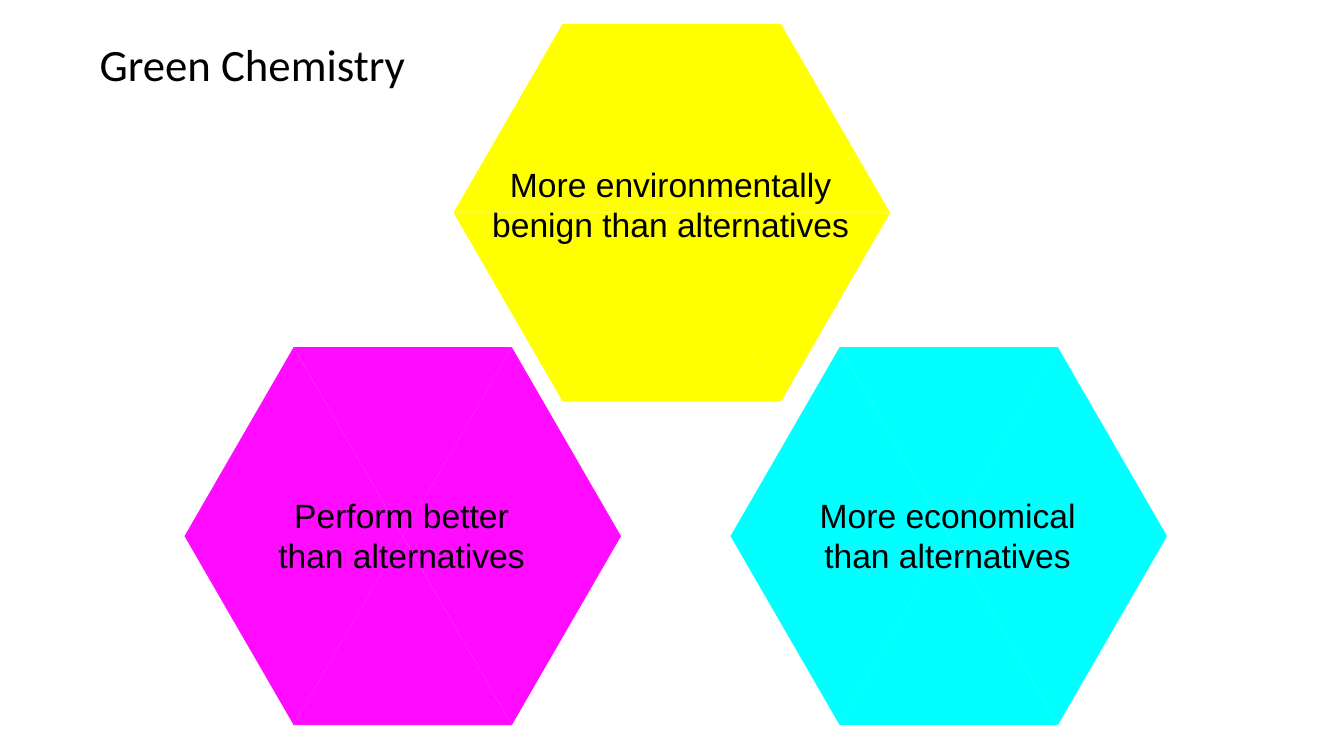
"""Build the Green Chemistry slide with three hexagons made of triangles."""
from pptx import Presentation
from pptx.dml.color import RGBColor
from pptx.enum.shapes import MSO_SHAPE
from pptx.enum.text import MSO_AUTO_SIZE, PP_ALIGN
from pptx.util import Cm, Pt

TRI = MSO_SHAPE.ISOSCELES_TRIANGLE
LEFT, MID = PP_ALIGN.LEFT, PP_ALIGN.CENTER
FIT = MSO_AUTO_SIZE.SHAPE_TO_FIT_TEXT

COLORS = {"top": "FFFF00", "left": "FF0BFF", "right": "00FFFF", "text": "000000"}
SIDE, HIGH = 5.5, 4.76
HEXES = [
    ("top", 11.43, 0.6, 3.4, 9.6,
     ["More environmentally", "benign than alternatives"]),
    ("left", 4.65, 8.75, 3.6, 6.78,
     ["Perform better", "than alternatives"]),
    ("right", 18.41, 8.75, 3.6, 7.04,
     ["More economical", "than alternatives"]),
]


def add_text(shapes, box, lines, font, size, align):
    """Put unwrapped lines of text in the box."""
    frame = shapes.add_textbox(*map(Cm, box)).text_frame
    frame.word_wrap = False
    frame.auto_size = FIT
    frame.text = "\n".join(lines)
    for para in frame.paragraphs:
        para.alignment = align
        para.font.name = font
        para.font.size = Pt(size)
        para.font.color.rgb = RGBColor.from_string(COLORS["text"])


def add_hex(slide, key, left, top, drop, width, lines):
    """Group six triangles and a centred label into a hexagon."""
    shapes = slide.shapes.add_group_shape().shapes
    for row in range(2):
        for col in range(3):
            part = shapes.add_shape(TRI, Cm(left + col * SIDE / 2),
                                    Cm(top + row * HIGH), Cm(SIDE), Cm(HIGH))
            part.rotation = 180 * ((row + col) % 2)
            part.shadow.inherit = False
            part.fill.solid()
            part.fill.fore_color.rgb = RGBColor.from_string(COLORS[key])
            part.line.fill.background()
    box = (left + SIDE - width / 2 - 0.03, top + drop, width, 2.31)
    add_text(shapes, box, lines, "Arial", 24, MID)


def main():
    """Build and save the slide."""
    deck = Presentation()
    deck.slide_width, deck.slide_height = Cm(33.87), Cm(19.05)
    slide = deck.slides.add_slide(deck.slide_layouts[6])
    for item in HEXES:
        add_hex(slide, *item)
    add_text(slide.shapes, (2.26, 0.79, 8.28, 1.62), ["Green Chemistry"],
             "Calibri", 32, LEFT)
    deck.save("out.pptx")


if __name__ == "__main__":
    main()
